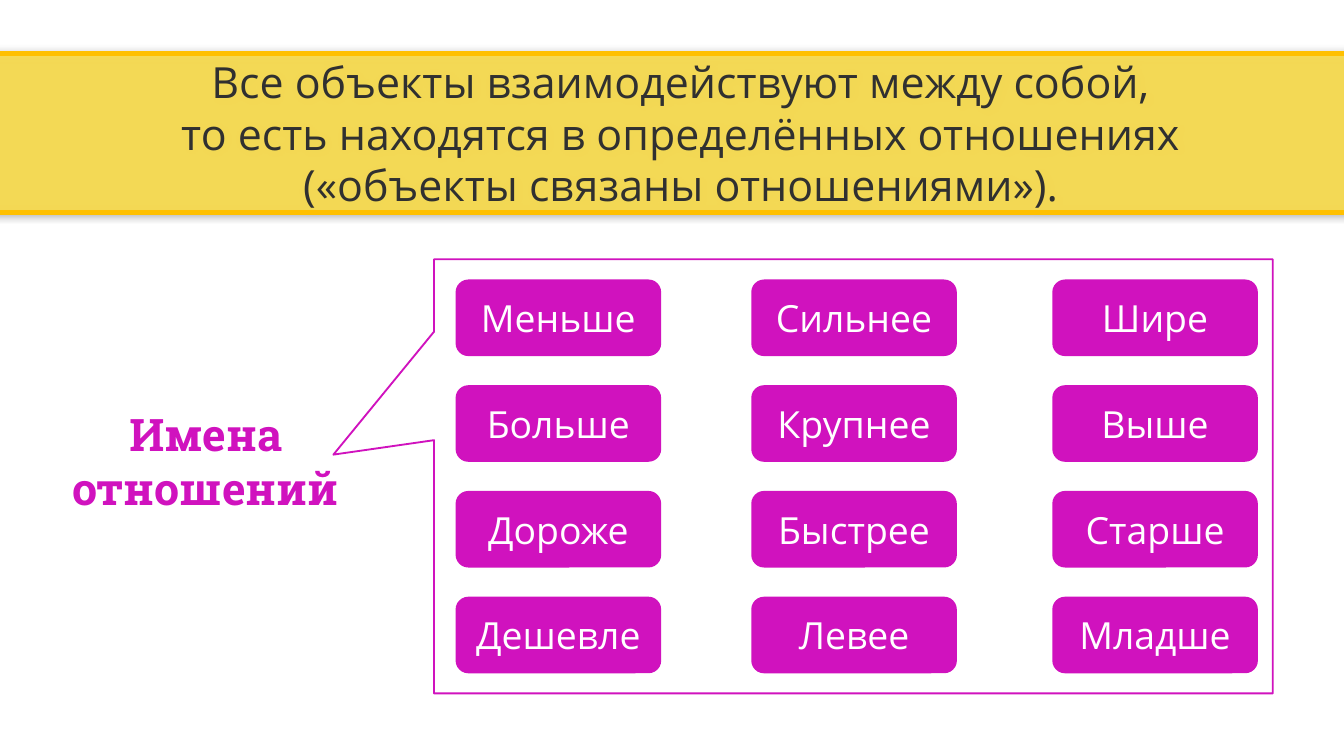
from lxml import etree
from pptx import Presentation
from pptx.dml.color import RGBColor
from pptx.enum.shapes import MSO_SHAPE
from pptx.enum.text import MSO_ANCHOR, PP_ALIGN
from pptx.oxml import parse_xml
from pptx.oxml.ns import nsdecls, qn
from pptx.util import Inches, Pt

MAGENTA = "D012BE"


def color(value):
    return RGBColor.from_string(value)


def write(sp, text, size, font, fill, bold=False):
    tf = sp.text_frame
    tf.word_wrap = True
    for i, line in enumerate(text.split("\n")):
        p = tf.paragraphs[0] if i == 0 else tf.add_paragraph()
        p.alignment = PP_ALIGN.CENTER
        r = p.add_run()
        r.text = line
        r.font.size = Pt(size)
        r.font.name = font
        r.font.bold = bold
        r.font.color.rgb = color(fill)


prs = Presentation()
prs.slide_width = Inches(10)
prs.slide_height = prs.slide_width * 9 // 16
s = prs.slides.add_slide(prs.slide_layouts[6])

# Banner: translucent yellow with a soft shadow
sp = s.shapes.add_shape(MSO_SHAPE.RECTANGLE, Inches(-0.12), Inches(0.4),
                        Inches(10.16), Inches(1.18))
sp.fill.solid()
sp.fill.fore_color.rgb = color("FEDF44")
srgb = sp._element.spPr.find(qn("a:solidFill"))[0]
etree.SubElement(srgb, qn("a:alpha"), val="85000")
sp.line.color.rgb = color("FFC000")
sp.line.width = Pt(2.5)
sp._element.spPr.append(parse_xml(
    f'<a:effectLst {nsdecls("a")}><a:outerShdw blurRad="{Pt(5)}" dist="0" dir="0">'
    '<a:srgbClr val="000000"><a:alpha val="32000"/></a:srgbClr>'
    '</a:outerShdw></a:effectLst>'))
tf = sp.text_frame
tf.vertical_anchor = MSO_ANCHOR.MIDDLE
tf.margin_left = Inches(0.42)
tf.margin_right = tf.margin_top = tf.margin_bottom = Inches(0.2)
write(sp, "Все объекты взаимодействуют между собой,\n"
          "то есть находятся в определённых отношениях\n"
          "(«объекты связаны отношениями»).",
      23, "Open Sans", "303030")

# Relation names, column by column
columns = [
    (3.39, ["Меньше", "Больше", "Дороже", "Дешевле"]),
    (5.59, ["Сильнее", "Крупнее", "Быстрее", "Левее"]),
    (7.83, ["Шире", "Выше", "Старше", "Младше"]),
]
row_step = (4.44 - 2.08) / 3
for left, names in columns:
    for row, name in enumerate(names):
        sp = s.shapes.add_shape(MSO_SHAPE.ROUNDED_RECTANGLE, Inches(left),
                                Inches(2.08 + row * row_step), Inches(1.53), Inches(0.57))
        sp.shadow.inherit = False
        sp.fill.solid()
        sp.fill.fore_color.rgb = color(MAGENTA)
        sp.line.fill.background()
        sp.text_frame.vertical_anchor = MSO_ANCHOR.MIDDLE
        write(sp, name, 20, "Open Sans", "FFFFFF")

# Label
sp = s.shapes.add_textbox(Inches(0.38), Inches(2.98), Inches(2.3), Inches(0.91))
write(sp, "Имена отношений", 24, "Roboto Slab", MAGENTA, bold=True)

# Callout frame pointing at the label
sp = s.shapes.add_shape(MSO_SHAPE.RECTANGULAR_CALLOUT, Inches(3.23), Inches(1.93),
                        Inches(6.24), Inches(3.23))
sp.adjustments[0], sp.adjustments[1] = -0.62, -0.05
sp.shadow.inherit = False
sp.fill.background()
sp.line.color.rgb = color(MAGENTA)
sp.line.width = Pt(1)

prs.save("out.pptx")
